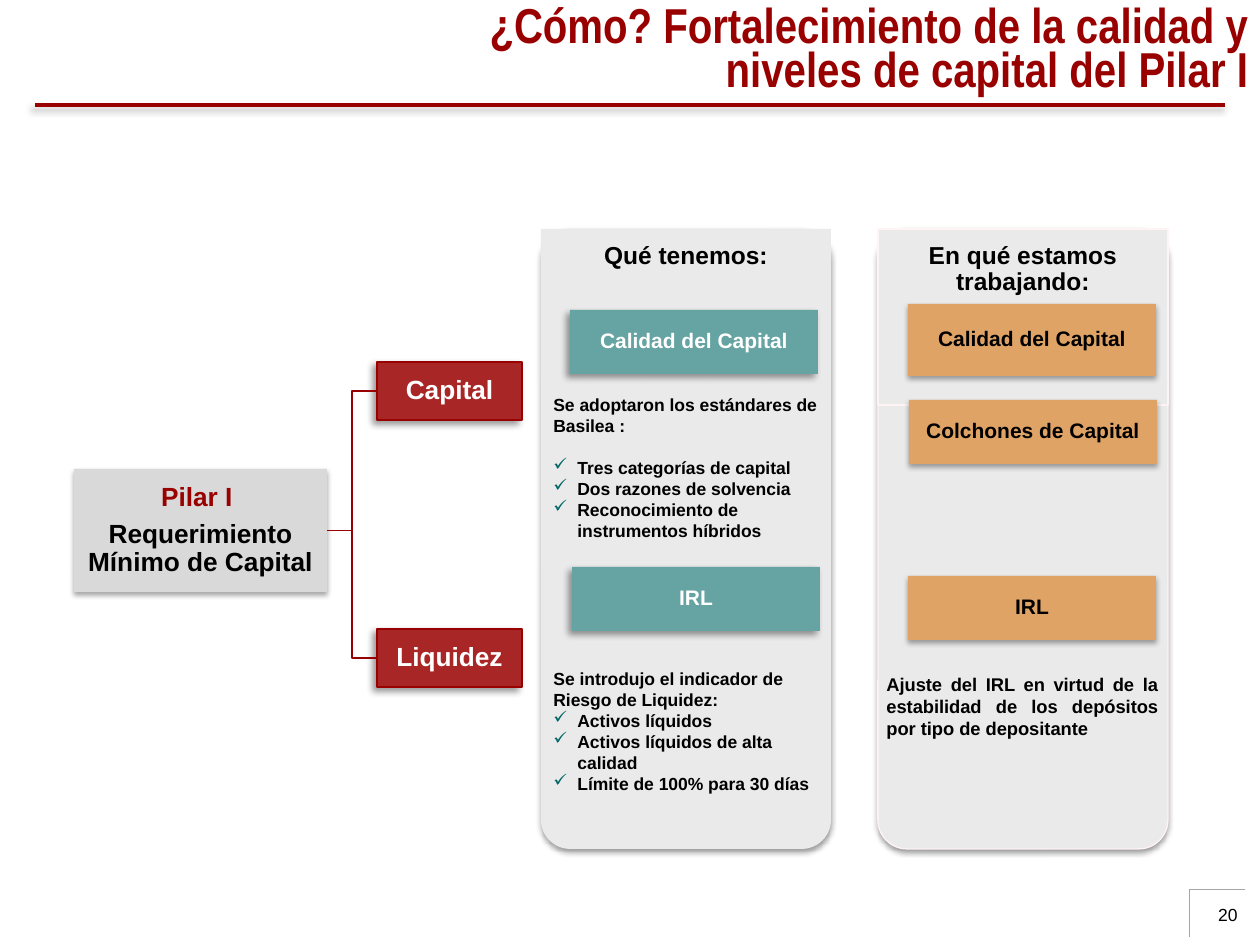
import pptx
import pptx.util
import pptx.dml.color
import pptx.enum.shapes
import pptx.enum.text
import pptx.oxml
import pptx.oxml.ns
import lxml.etree

PX = 914400 / 126
SHAPE = pptx.enum.shapes.MSO_SHAPE
LINK = pptx.enum.shapes.MSO_CONNECTOR
ANCHOR = pptx.enum.text.MSO_ANCHOR
ALIGN = {
    "l": pptx.enum.text.PP_ALIGN.LEFT,
    "c": pptx.enum.text.PP_ALIGN.CENTER,
    "r": pptx.enum.text.PP_ALIGN.RIGHT,
    "j": pptx.enum.text.PP_ALIGN.JUSTIFY,
}
COLORS = {
    "maroon": "990000", "red": "A82626", "teal": "66A3A3", "check": "006666",
    "orange": "E0A366", "panel": "EAEAEA", "gray": "D9D9D9", "rule": "A6A6A6",
    "blush": "FFF3F4", "black": "000000", "white": "FFFFFF",
}
# opacity %, blur pt, distance pt, direction in degrees
SHADOWS = {"panel": (38, 3.1, 1.6, 90), "soft": (35, 3.1, 1.8, 90),
           "diagonal": (40, 4, 3, 135)}

TITLE = "¿Cómo? Fortalecimiento de la calidad y niveles de capital del Pilar I"
PAGE = "20"
# heading, left, heading height, outline
PANELS = [("Qué tenemos:", 541, 151, None),
          ("En qué estamos trabajando:", 878, 176, "blush")]
PANEL_TOP, PANEL_W, PANEL_H = 229, 290, 620
PILLAR = [("Pilar I ", "maroon"), ("Requerimiento Mínimo de Capital", "black")]
PILLAR_BOX = (74, 469, 253, 123)
BRANCHES = [("Capital", 362), ("Liquidez", 629)]
# text, left, top, height, fill, text colour, shadow
TOPICS = [
    ("Calidad del Capital", 570, 310, 64, "teal", "white", "diagonal"),
    ("IRL", 572, 567, 64, "teal", "white", "diagonal"),
    ("Calidad del Capital", 908, 304, 72, "orange", "black", "soft"),
    ("Colchones de Capital", 909, 400, 64, "orange", "black", "soft"),
    ("IRL", 908, 576, 64, "orange", "black", "soft"),
]
# box, lead sentence, gap before the list, list items
NOTES = [
    ((541, 388, 290, 204), "Se adoptaron los estándares de Basilea :", 12,
     ["Tres categorías de capital", "Dos razones de solvencia",
      "Reconocimiento de instrumentos híbridos"]),
    ((541, 662, 297, 161), "Se introdujo el indicador de Riesgo de Liquidez:", 0,
     ["Activos líquidos", "Activos líquidos de alta calidad",
      "Límite de 100% para 30 días"]),
]
ADJUSTMENT = ("Ajuste del IRL en virtud de la estabilidad de los depósitos "
              "por tipo de depositante")


def px(n):
    return pptx.util.Emu(round(n * PX))


def rgb(name):
    return pptx.dml.color.RGBColor.from_string(COLORS[name])


def set_shadow(sp, kind=None):
    """Give the shape an outer shadow, or none at all."""
    spPr = sp._element.spPr
    effects = spPr.find(pptx.oxml.ns.qn("a:effectLst"))
    if effects is None:
        effects = lxml.etree.SubElement(spPr, pptx.oxml.ns.qn("a:effectLst"))
    if kind:
        alpha, blur, dist, angle = SHADOWS[kind]
        effects.append(pptx.oxml.parse_xml(
            f'<a:outerShdw {pptx.oxml.ns.nsdecls("a")} blurRad="{round(blur * 12700)}" '
            f'dist="{round(dist * 12700)}" dir="{angle * 60000}" algn="ctr" rotWithShape="0">'
            f'<a:srgbClr val="{COLORS["black"]}"><a:alpha val="{alpha * 1000}"/></a:srgbClr>'
            '</a:outerShdw>'))


def add_box(slide, box, fill, line=None, width=0.75, shadow=None, shape=SHAPE.RECTANGLE):
    sp = slide.shapes.add_shape(shape, *map(px, box))
    sp.fill.solid()
    sp.fill.fore_color.rgb = rgb(fill)
    if line:
        sp.line.color.rgb = rgb(line)
        sp.line.width = pptx.util.Pt(width)
    else:
        sp.line.fill.background()
    sp.shadow.inherit = False
    set_shadow(sp, shadow)
    return sp


def add_line(slide, ends, color, width, shadow=None, kind=LINK.STRAIGHT):
    line = slide.shapes.add_connector(kind, *map(px, ends))
    line.line.color.rgb = rgb(color)
    line.line.width = pptx.util.Pt(width)
    set_shadow(line, shadow)
    return line


def add_check(p):
    """Hang the paragraph behind a green check mark."""
    pPr = p._p.get_or_add_pPr()
    pPr.set("marL", str(px(24)))
    pPr.set("indent", str(-px(24)))
    color = lxml.etree.SubElement(pPr, pptx.oxml.ns.qn("a:buClr"))
    lxml.etree.SubElement(color, pptx.oxml.ns.qn("a:srgbClr"), val=COLORS["check"])
    lxml.etree.SubElement(pPr, pptx.oxml.ns.qn("a:buChar"), char="✓")


def write(sp, text, size, color="black", font="Arial", bold=True, align="l",
          spacing=None, before=0, after=0, check=False, inset=None, anchor=ANCHOR.TOP):
    """Append one paragraph to the shape's text."""
    tf = sp.text_frame
    tf.word_wrap = True
    tf.vertical_anchor = anchor
    if inset is not None:
        tf.margin_left = tf.margin_top = tf.margin_right = tf.margin_bottom = px(inset)
    p = tf.add_paragraph() if tf.text else tf.paragraphs[0]
    if check:
        add_check(p)
    p.alignment = ALIGN[align]
    if spacing:
        p.line_spacing = spacing
    if before:
        p.space_before = pptx.util.Pt(before)
    if after:
        p.space_after = pptx.util.Pt(after)
    r = p.add_run()
    r.text = text
    r.font.name, r.font.size, r.font.bold = font, pptx.util.Pt(size), bold
    r.font.color.rgb = rgb(color)


def add_text(slide, box, text, size, **style):
    sp = slide.shapes.add_textbox(*map(px, box))
    write(sp, text, size, **style)
    return sp


def main():
    prs = pptx.Presentation()
    prs.slide_width, prs.slide_height = px(1260), px(945)
    slide = prs.slides.add_slide(prs.slide_layouts[6])
    centred = dict(align="c", spacing=0.9, inset=1, anchor=ANCHOR.MIDDLE)

    add_line(slide, (35, 105, 1225, 105), "maroon", 2, "diagonal")
    add_line(slide, (1190, 889, 1245, 889), "rule", 0.25)
    add_line(slide, (1189, 889, 1189, 937), "rule", 0.25)
    add_text(slide, (461, 2, 799, 102), TITLE, 28, color="maroon",
             font="Arial Narrow", align="r", spacing=0.75)

    for heading, left, height, line in PANELS:
        panel = add_box(slide, (left, PANEL_TOP, PANEL_W, PANEL_H), "panel", line, 0,
                        "panel", SHAPE.ROUNDED_RECTANGLE)
        panel.adjustments[0] = 0.1
        head = add_box(slide, (left, PANEL_TOP, PANEL_W, height), "panel", line, 0)
        write(head, heading, 14, align="c", spacing=0.9, inset=14)

    pillar = add_box(slide, PILLAR_BOX, "gray", shadow="soft")
    for text, color in PILLAR:
        write(pillar, text, 15, color=color, after=5, **centred)
    for text, top in BRANCHES:
        branch = add_box(slide, (377, top, 145, 58), "red", "maroon", shadow="diagonal")
        write(branch, text, 15, color="white", **centred)
        link = add_line(slide, (327, 530, 377, top + 29), "maroon", 0.75, kind=LINK.ELBOW)
        link.begin_connect(pillar, 3)
        link.end_connect(branch, 1)

    for text, left, top, height, fill, color, shadow in TOPICS:
        topic = add_box(slide, (left, top, 248, height), fill, shadow=shadow)
        write(topic, text, 12, color=color, **centred)

    for box, lead, gap, items in NOTES:
        note = add_text(slide, box, lead, 10)
        for i, item in enumerate(items):
            write(note, item, 10, check=True, before=0 if i else gap)
    add_text(slide, (874, 667, 297, 102), ADJUSTMENT, 10.5, align="j")
    add_text(slide, (1172, 898, 78, 50), PAGE, 10, bold=False, align="r")

    prs.save("out.pptx")


if __name__ == "__main__":
    main()
